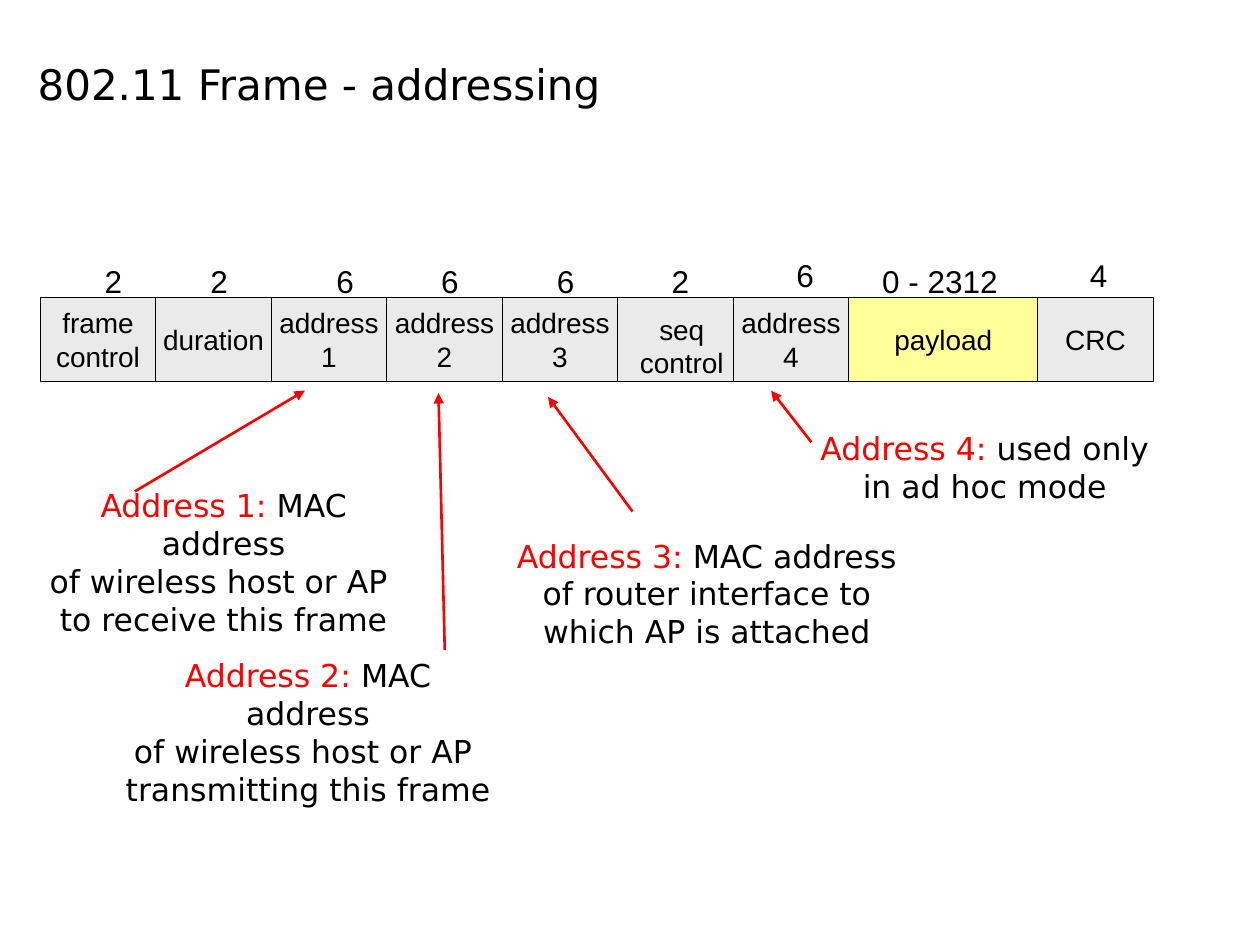
from dataclasses import dataclass

from pptx import Presentation
from pptx.dml.color import RGBColor
from pptx.enum.shapes import MSO_CONNECTOR, MSO_SHAPE
from pptx.enum.text import MSO_ANCHOR, PP_ALIGN
from pptx.oxml.ns import qn
from pptx.util import Inches, Pt
from lxml.etree import SubElement


@dataclass(frozen=True)
class Theme:
    black: RGBColor = RGBColor(0, 0, 0)
    red: RGBColor = RGBColor(0xFF, 0, 0)
    grey: RGBColor = RGBColor(0xEA, 0xEA, 0xEA)
    yellow: RGBColor = RGBColor(0xFF, 0xFF, 0x99)
    sans: str = "DejaVu Sans"
    arial: str = "Arial"
    title: int = 24
    note: int = 18
    field: int = 16
    outline: float = 0.75
    arrow: float = 1.5


THEME = Theme()
FIELD_WIDTH = 11 / 12
FRAME_LEFT, FRAME_TOP, FRAME_HEIGHT = 0.32, 2.36, 0.67


@dataclass(frozen=True)
class Field:
    name: str
    size: str
    size_center: float
    size_top: float = 2.03
    width: float = FIELD_WIDTH
    fill: RGBColor = THEME.grey
    label_shift: tuple[float, float] | None = None


@dataclass(frozen=True)
class Note:
    heading: str
    body: str
    box: tuple[float, float, float, float]
    start: tuple[float, float]
    end: tuple[float, float]


FIELDS = [
    Field("frame\ncontrol", "2", 0.9),
    Field("duration", "2", 1.74),
    Field("address\n1", "6", 2.74),
    Field("address\n2", "6", 3.57),
    Field("address\n3", "6", 4.49),
    Field("seq\ncontrol", "2", 5.4, label_shift=(0.05, 0.05)),
    Field("address\n4", "6", 6.39, size_top=1.98),
    Field("payload", "0 - 2312", 7.46, width=1.5, fill=THEME.yellow),
    Field("CRC", "4", 8.72, size_top=1.98),
]

NOTES = [
    Note("Address 2:", " MAC address\nof wireless host or AP \ntransmitting this frame",
         (0.87, 5.16, 3.15, 1.3), (3.53, 5.16), (3.48, 3.12)),
    Note("Address 1:", " MAC address\nof wireless host or AP \nto receive this frame",
         (0.24, 3.81, 3.07, 1.3), (1.07, 3.9), (2.42, 3.1)),
    Note("Address 3:", " MAC address\nof router interface to which AP is attached",
         (3.94, 4.21, 3.34, 1), (5.02, 4.06), (4.35, 3.15)),
    Note("Address 4:", " used only in ad hoc mode",
         (6.39, 3.36, 2.85, 0.7), (6.44, 3.51), (6.12, 3.1)),
]


def write(sp, text: str, *, size: int, font: str, heading: str = "",
          align=PP_ALIGN.CENTER, anchor=MSO_ANCHOR.TOP, wrap: bool = False) -> None:
    """Fill a shape with one paragraph per line, after an optional red heading."""
    tf = sp.text_frame
    tf.word_wrap, tf.vertical_anchor = wrap, anchor
    for i, line in enumerate(text.split("\n")):
        p = tf.add_paragraph() if i else tf.paragraphs[0]
        p.alignment = align
        runs = [(line, THEME.black)]
        if heading and i == 0:
            runs.insert(0, (heading, THEME.red))
        for words, color in runs:
            r = p.add_run()
            r.text = words
            r.font.name, r.font.size = font, Pt(size)
            r.font.color.rgb = color


def add_text(shapes, box: tuple[float, float, float, float], text: str, **fmt) -> None:
    write(shapes.add_textbox(*map(Inches, box)), text, **fmt)


def add_field(shapes, field: Field, left: float) -> None:
    sp = shapes.add_shape(MSO_SHAPE.RECTANGLE, Inches(left), Inches(FRAME_TOP),
                          Inches(field.width), Inches(FRAME_HEIGHT))
    sp.shadow.inherit = False
    sp.fill.solid()
    sp.fill.fore_color.rgb = field.fill
    sp.line.color.rgb = THEME.black
    sp.line.width = Pt(THEME.outline)
    fmt = dict(size=THEME.field, font=THEME.arial, anchor=MSO_ANCHOR.MIDDLE)
    if field.label_shift:
        dx, dy = field.label_shift
        add_text(shapes, (left + dx, FRAME_TOP + dy, field.width, FRAME_HEIGHT),
                 field.name, **fmt)
    else:
        write(sp, field.name, **fmt)


def add_size(shapes, field: Field) -> None:
    width = 1.12 if len(field.size) > 1 else 0.34
    add_text(shapes, (field.size_center - width / 2, field.size_top, width, 0.4),
             field.size, size=THEME.note, font=THEME.arial)


def add_arrow(shapes, start: tuple[float, float], end: tuple[float, float]) -> None:
    line = shapes.add_connector(MSO_CONNECTOR.STRAIGHT, *map(Inches, start + end))
    line.line.color.rgb = THEME.red
    line.line.width = Pt(THEME.arrow)
    SubElement(line.line._get_or_add_ln(), qn("a:tailEnd"), type="triangle")
    SubElement(line._element.spPr, qn("a:effectLst"))


def main() -> None:
    prs = Presentation()
    prs.slide_width, prs.slide_height = Inches(10), Inches(7.5)
    s = prs.slides.add_slide(prs.slide_layouts[6])

    # Title
    add_text(s.shapes, (0.2, 0, 6.61, 0.91), "802.11 Frame - addressing",
             size=THEME.title, font=THEME.sans, align=PP_ALIGN.LEFT,
             anchor=MSO_ANCHOR.BOTTOM, wrap=True)

    # Frame fields with their sizes in bytes above
    frame = s.shapes.add_group_shape().shapes
    left = FRAME_LEFT
    for field in FIELDS:
        add_field(frame, field, left)
        add_size(frame, field)
        left += field.width

    # Address notes and their arrows
    for note in NOTES:
        add_text(s.shapes, note.box, note.body, heading=note.heading,
                 size=THEME.note, font=THEME.sans, wrap=True)
        add_arrow(s.shapes, note.start, note.end)

    prs.save("out.pptx")


if __name__ == "__main__":
    main()
